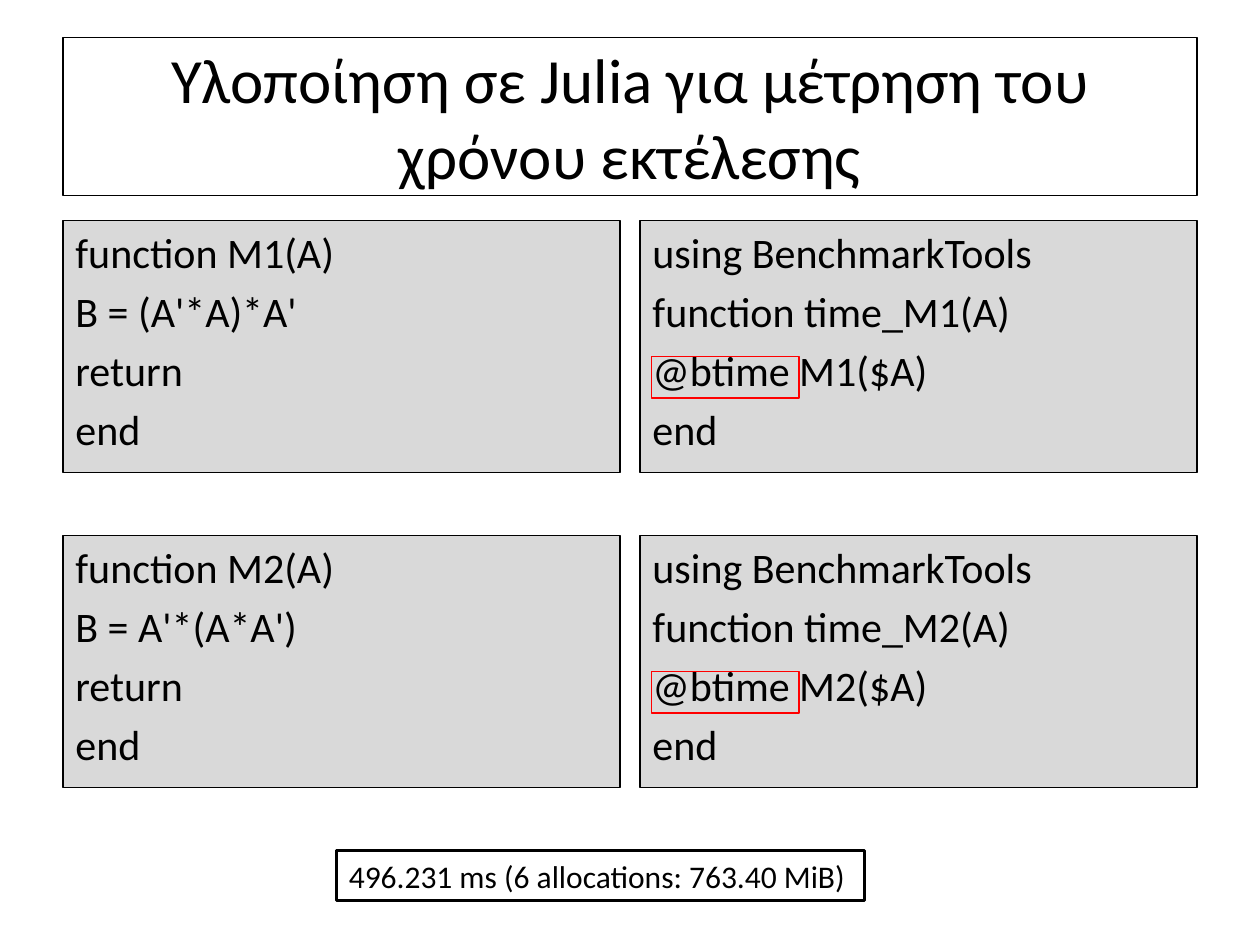
from pptx import Presentation
from pptx.dml.color import RGBColor
from pptx.enum.shapes import MSO_SHAPE as SHAPE
from pptx.enum.text import MSO_ANCHOR as ANCHOR, PP_ALIGN as ALIGN
from pptx.util import Inches, Pt

BLACK = RGBColor(0x00, 0x00, 0x00)
WHITE = RGBColor(0xFF, 0xFF, 0xFF)
GRAY = RGBColor(0xD9, 0xD9, 0xD9)
RED = RGBColor(0xFF, 0x00, 0x00)

FONT = "Calibri"
MARGIN = 0.5
CODE_W, CODE_H = 4.42, 2
CODE_TOP, ROW_STEP = 1.75, 2.5
COL_STEP = 9 - CODE_W


def add_box(slide, x, y, w, h, fill=None, line=BLACK, weight=0.75):
    s = slide.shapes.add_shape(
        SHAPE.RECTANGLE, Inches(x), Inches(y), Inches(w), Inches(h))
    s.shadow.inherit = False
    if fill is None:
        s.fill.background()
    else:
        s.fill.solid()
        s.fill.fore_color.rgb = fill
    s.line.color.rgb = line
    s.line.width = Pt(weight)
    return s


def set_text(s, text, size=24, align=ALIGN.LEFT, anchor=ANCHOR.TOP,
             gap=0, wrap=True):
    tf = s.text_frame
    tf.word_wrap = wrap
    tf.vertical_anchor = anchor
    for i, line in enumerate(text.split("\n")):
        p = tf.paragraphs[0] if i == 0 else tf.add_paragraph()
        p.alignment = align
        if i and gap:
            p.space_before = Pt(gap)
        r = p.add_run()
        r.text = line
        r.font.name = FONT
        r.font.size = Pt(size)
        r.font.color.rgb = BLACK


def add_title(slide, x, y, w, h):
    s = add_box(slide, x, y, w, h)
    set_text(s, "Υλοποίηση σε Julia για μέτρηση του χρόνου εκτέλεσης",
             size=36, align=ALIGN.CENTER, anchor=ANCHOR.MIDDLE)


def add_code(slide, x, y, w, h, code):
    s = add_box(slide, x, y, w, h, fill=GRAY)
    set_text(s, code, gap=4.8)


def add_timing(slide, x, y, w, h, name):
    add_code(slide, x, y, w, h,
             f"using BenchmarkTools\nfunction time_{name}(A)\n"
             f"@btime {name}($A)\nend")
    add_box(slide, x + 0.09, y + 1.08, 1.17, 0.33, line=RED, weight=1)


def add_result(slide, x, y, w, h):
    s = add_box(slide, x, y, w, h, weight=1.5)
    set_text(s, "496.231 ms (6 allocations: 763.40 MiB)", size=18, wrap=False)


def main():
    prs = Presentation()
    prs.slide_width, prs.slide_height = Inches(10), Inches(7.5)
    slide = prs.slides.add_slide(prs.slide_layouts[6])
    slide.background.fill.solid()
    slide.background.fill.fore_color.rgb = WHITE

    add_title(slide, MARGIN, 0.3, 9, 1.25)
    methods = [("M1", "(A'*A)*A'"), ("M2", "A'*(A*A')")]
    for row, (name, product) in enumerate(methods):
        y = CODE_TOP + row * ROW_STEP
        add_code(slide, MARGIN, y, CODE_W, CODE_H,
                 f"function {name}(A)\nB = {product}\nreturn\nend")
        add_timing(slide, MARGIN + COL_STEP, y, CODE_W, CODE_H, name)
    add_result(slide, 2.67, 6.75, 4.19, 0.4)

    prs.save("out.pptx")


if __name__ == "__main__":
    main()
